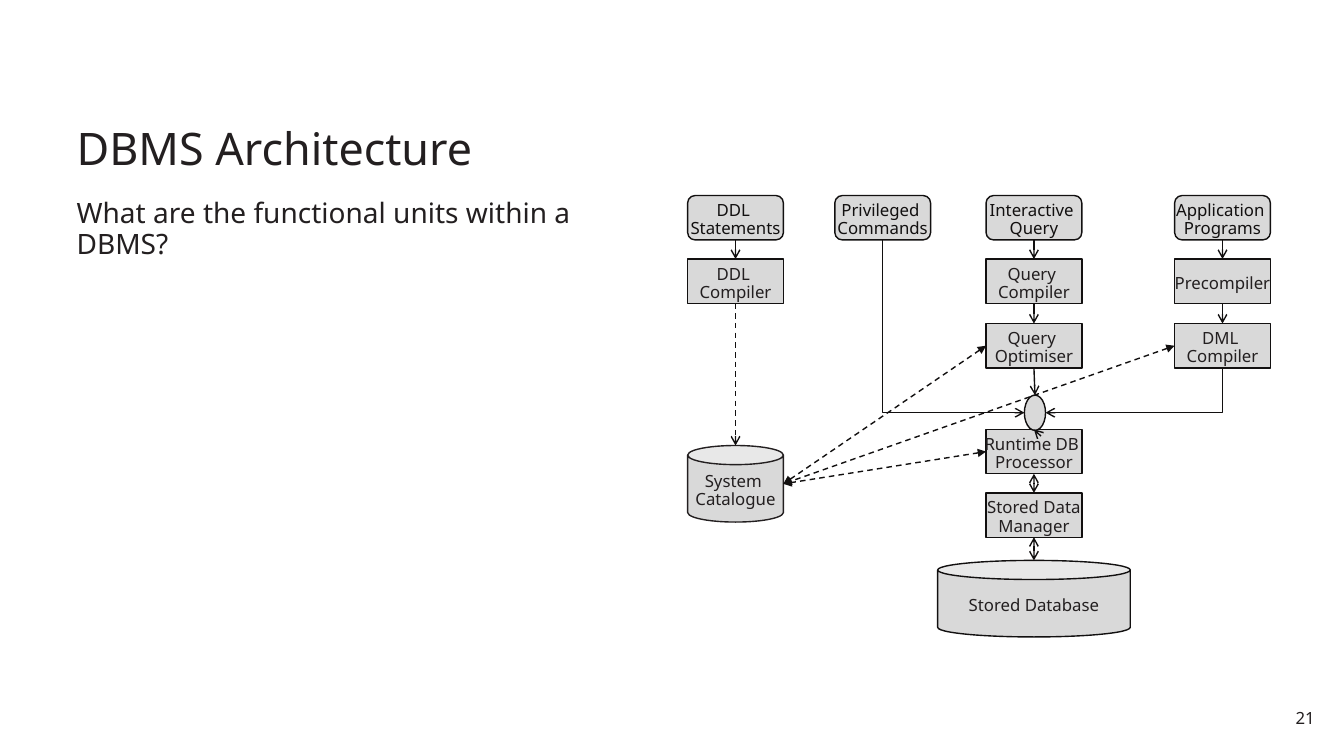
from lxml import etree
from pptx import Presentation
from pptx import util as u
from pptx.dml.color import RGBColor
from pptx.enum import dml, shapes, text
from pptx.oxml.ns import qn

FONT = "Noto Sans"
INK, LINE, GREY = "231F20", "121010", "D9D9D9"
BOX_W, BOX_H, CAN_H = 0.95, 0.44, 0.76
DDL_X, PRIVILEGED_X, QUERY_X, PROGRAM_X = 6.82, 8.28, 9.78, 11.65
STATEMENT_Y, COMPILER_Y, OPTIMISER_Y, RUNTIME_Y, MANAGER_Y = 1.94, 2.57, 3.21, 4.26, 4.89
CATALOGUE_Y, DATABASE_Y = 4.42, 5.56
JUNCTION_X, JUNCTION_Y, JUNCTION_W, JUNCTION_H = 10.16, 3.92, 0.21, 0.35

STATEMENTS = [
    (PROGRAM_X, ["Application ", "Programs"]),
    (QUERY_X, ["Interactive ", "Query"]),
    (PRIVILEGED_X, ["Privileged ", "Commands"]),
    (DDL_X, ["DDL ", "Statements"]),
]
UNITS = [
    (QUERY_X, MANAGER_Y, ["Stored Data", "Manager"]),
    (QUERY_X, RUNTIME_Y, ["Runtime DB ", "Processor"]),
    (PROGRAM_X, COMPILER_Y, ["Precompiler"]),
    (QUERY_X, OPTIMISER_Y, ["Query ", "Optimiser"]),
    (QUERY_X, COMPILER_Y, ["Query ", "Compiler"]),
    (PROGRAM_X, OPTIMISER_Y, ["DML ", "Compiler"]),
    (DDL_X, COMPILER_Y, ["DDL ", "Compiler"]),
]


def color(value):
    return RGBColor.from_string(value)


def middle(left):
    return left + BOX_W / 2


def write(frame, lines, size, ink, align, spacing=0.9):
    for index, line in enumerate(lines):
        para = frame.add_paragraph() if index else frame.paragraphs[0]
        para.text = line
        para.alignment = align
        para.line_spacing = spacing
        para.font.name = FONT
        para.font.size = u.Pt(size)
        para.font.color.rgb = color(ink)


def set_insets(frame, left, top, right, bottom):
    frame.margin_left, frame.margin_top = u.Inches(left), u.Inches(top)
    frame.margin_right, frame.margin_bottom = u.Inches(right), u.Inches(bottom)


def add_text(page, at, line, size, align=text.PP_ALIGN.LEFT,
             anchor=text.MSO_ANCHOR.TOP, inset=0.04):
    frame = page.shapes.add_textbox(*map(u.Inches, at)).text_frame
    frame.word_wrap = True
    frame.vertical_anchor = anchor
    set_insets(frame, 0.08, inset, 0.08, inset)
    write(frame, [line], size, INK, align)


def add_unit(page, kind, at, lines=(), ink=INK, outline=LINE):
    unit = page.shapes.add_shape(kind, *map(u.Inches, at))
    unit.shadow.inherit = False
    unit.fill.solid()
    unit.fill.fore_color.rgb = color(GREY)
    unit.line.color.rgb = color(outline)
    unit.line.width = u.Pt(1)
    frame = unit.text_frame
    frame.word_wrap = False
    frame.vertical_anchor = text.MSO_ANCHOR.MIDDLE
    set_insets(frame, 0.1, 0.05, 0.1, 0)
    write(frame, lines, 12, ink, text.PP_ALIGN.CENTER)


def add_arrow(page, start, end, head=None, tail="arrow", dashed=False, bent=False):
    """Join two points; a bent arrow leaves its start sideways and turns once."""
    arrow = page.shapes.add_connector(
        shapes.MSO_CONNECTOR.ELBOW if bent else shapes.MSO_CONNECTOR.STRAIGHT,
        *map(u.Inches, (*start, *end)))
    arrow.line.color.rgb = color(LINE)
    arrow.line.width = u.Pt(1)
    if dashed:
        arrow.line.dash_style = dml.MSO_LINE.DASH
    properties = arrow.line._get_or_add_ln()
    for tag, style in (("a:headEnd", head), ("a:tailEnd", tail)):
        if style:
            etree.SubElement(properties, qn(tag), type=style)
    outline = arrow._element.spPr
    if bent:
        outline.find(qn("a:prstGeom")).set("prst", "bentConnector2")
    etree.SubElement(outline, qn("a:effectLst"))


def add_units(page):
    add_unit(page, shapes.MSO_SHAPE.CAN, (9.3, DATABASE_Y, 1.91, CAN_H), ["Stored Database"])
    for left, lines in STATEMENTS:
        add_unit(page, shapes.MSO_SHAPE.ROUNDED_RECTANGLE,
                 (left, STATEMENT_Y, BOX_W, BOX_H), lines, ink=LINE)
    for left, top, lines in UNITS:
        add_unit(page, shapes.MSO_SHAPE.RECTANGLE, (left, top, BOX_W, BOX_H), lines)
    add_unit(page, shapes.MSO_SHAPE.CAN, (DDL_X, CATALOGUE_Y, BOX_W, CAN_H),
             ["System ", "Catalogue"], outline=INK)
    add_unit(page, shapes.MSO_SHAPE.OVAL, (JUNCTION_X, JUNCTION_Y, JUNCTION_W, JUNCTION_H))


def add_flows(page):
    for left, upper, lower, head, dashed in [
        (DDL_X, STATEMENT_Y, COMPILER_Y, None, False),
        (QUERY_X, STATEMENT_Y, COMPILER_Y, None, False),
        (PROGRAM_X, STATEMENT_Y, COMPILER_Y, None, False),
        (QUERY_X, COMPILER_Y, OPTIMISER_Y, None, False),
        (PROGRAM_X, COMPILER_Y, OPTIMISER_Y, None, False),
        (QUERY_X, RUNTIME_Y, MANAGER_Y, "arrow", False),
        (QUERY_X, MANAGER_Y, DATABASE_Y, "arrow", False),
        (DDL_X, COMPILER_Y, CATALOGUE_Y, None, True),
    ]:
        x = middle(left)
        add_arrow(page, (x, upper + BOX_H), (x, lower), head, dashed=dashed)

    query_x = middle(QUERY_X)
    junction_x = JUNCTION_X + JUNCTION_W / 2
    junction_y = JUNCTION_Y + JUNCTION_H / 2
    add_arrow(page, (query_x, OPTIMISER_Y + BOX_H), (junction_x, JUNCTION_Y))
    add_arrow(page, (junction_x, JUNCTION_Y + JUNCTION_H), (query_x, RUNTIME_Y))
    for x, left, top in [(JUNCTION_X + JUNCTION_W, PROGRAM_X, OPTIMISER_Y),
                         (JUNCTION_X, PRIVILEGED_X, STATEMENT_Y)]:
        add_arrow(page, (x, junction_y), (middle(left), top + BOX_H),
                  head="arrow", tail=None, bent=True)

    catalogue = (DDL_X + BOX_W, CATALOGUE_Y + CAN_H / 2)
    for left, top in [(QUERY_X, OPTIMISER_Y), (PROGRAM_X, OPTIMISER_Y), (QUERY_X, RUNTIME_Y)]:
        add_arrow(page, (left, top + BOX_H / 2), catalogue,
                  head="triangle", tail="triangle", dashed=True)


def main():
    deck = Presentation()
    deck.slide_width, deck.slide_height = u.Inches(13.33), u.Inches(7.5)
    page = deck.slides.add_slide(deck.slide_layouts[6])
    add_text(page, (12.65, 6.98, 0.47, 0.31), "21", 12, text.PP_ALIGN.RIGHT, inset=0.06)
    add_text(page, (0.68, 0.76, 11.97, 1.02), "DBMS Architecture", 32,
             anchor=text.MSO_ANCHOR.BOTTOM)
    add_text(page, (0.68, 1.94, 5.91, 4.88), "What are the functional units within a DBMS?", 20)
    add_units(page)
    add_flows(page)
    deck.save("out.pptx")


if __name__ == "__main__":
    main()
